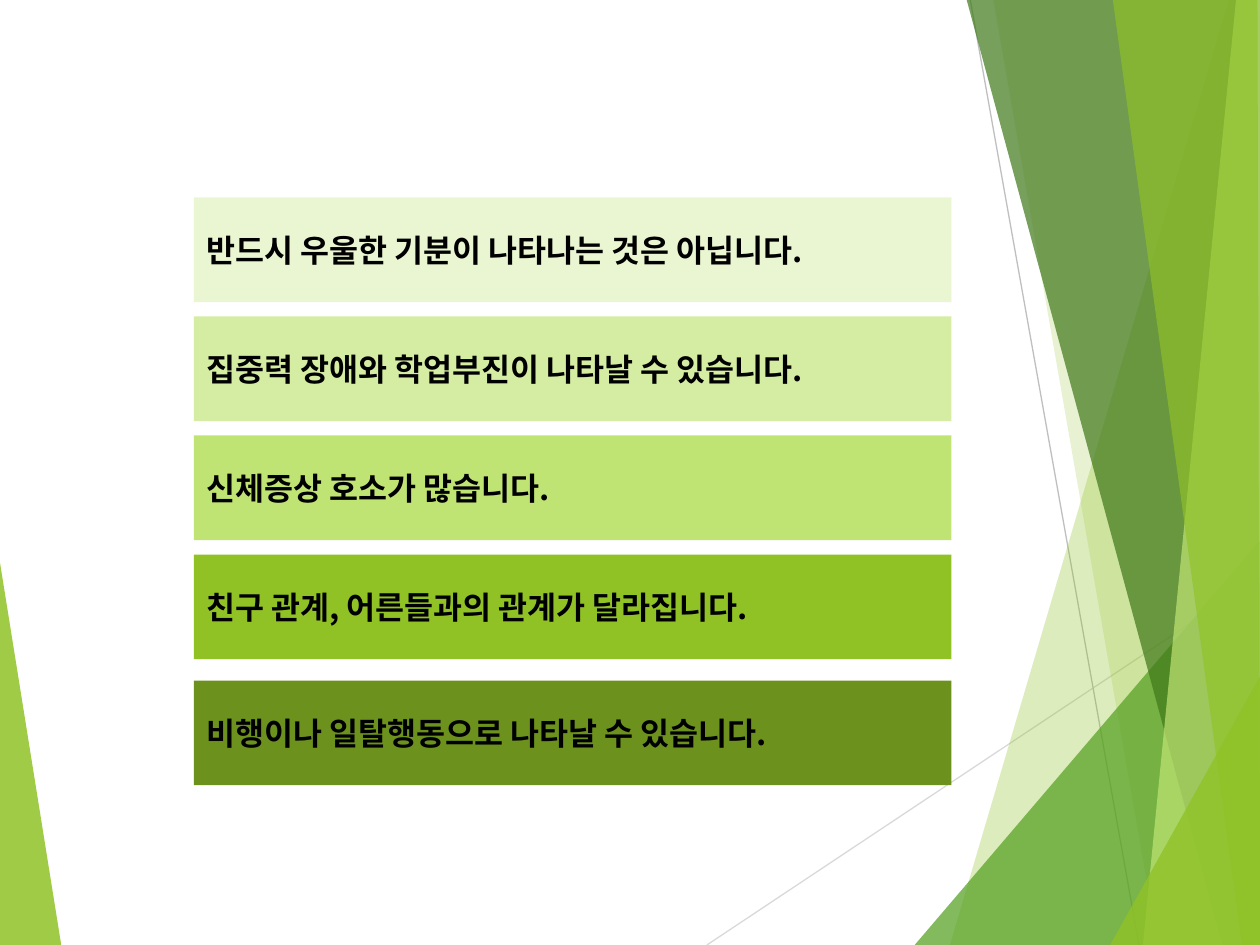
from typing import NamedTuple

from lxml import etree
from pptx import Presentation
from pptx import util as u
from pptx.dml.color import RGBColor
from pptx.enum import shapes, text
from pptx.oxml import ns

FONT = "Noto Sans CJK KR"
BLACK = RGBColor(0x00, 0x00, 0x00)
GREEN = RGBColor(0x90, 0xC2, 0x26)
LEAF = RGBColor(0x54, 0xA0, 0x21)
FOREST = RGBColor(0x3F, 0x78, 0x19)
LIME = RGBColor(0xC0, 0xE4, 0x74)
PALE = RGBColor(0xEA, 0xF6, 0xD1)
SOFT = RGBColor(0xD5, 0xED, 0xA2)
OLIVE = RGBColor(0x6C, 0x92, 0x1D)
LIGHT_GREY = RGBColor(0xD9, 0xD9, 0xD9)
GREY = RGBColor(0xBF, 0xBF, 0xBF)

# All lengths are in centimetres.
WIDTH, HEIGHT = 25.4, 19.05
EDGE, TOP = 25.43, -0.03  # shards bleed slightly past the page
BAR_LEFT, BAR_WIDTH, BAR_HEIGHT = 3.91, 15.27, 2.11
FIRST_TOP, BAR_PITCH, LAST_GAP = 3.98, 2.4, 0.14


class Shard(NamedTuple):
    color: RGBColor
    opacity: int
    points: list[tuple[float, float]]


class Ray(NamedTuple):
    color: RGBColor
    start: tuple[float, float]
    end: tuple[float, float]


class Bar(NamedTuple):
    color: RGBColor
    words: str


LEFT_SHARD = Shard(GREEN, 85, [(-0.03, 11.15), (1.24, 19.08), (-0.03, HEIGHT)])
RAYS = [
    Ray(LIGHT_GREY, (14.25, HEIGHT), (EDGE, 11.61)),
    Ray(GREY, (19.56, 0), (22.96, HEIGHT)),
]
RIGHT_SHARDS = [
    Shard(GREEN, 30, [(24.77, 0), (19.15, HEIGHT), (25.45, 19.08), (EDGE, 0)]),
    Shard(GREEN, 20, [(20.02, TOP), (23.34, HEIGHT), (EDGE, HEIGHT), (EDGE, TOP)]),
    Shard(LEAF, 72, [(18.44, HEIGHT), (WIDTH, 10.9), (EDGE, HEIGHT)]),
    Shard(FOREST, 70, [(19.48, TOP), (24.64, HEIGHT), (EDGE, HEIGHT), (EDGE, TOP)]),
    Shard(LIME, 70, [(24.92, TOP), (23.04, HEIGHT), (EDGE, HEIGHT), (WIDTH, TOP)]),
    Shard(GREEN, 65, [(22.43, TOP), (25.04, HEIGHT), (WIDTH, HEIGHT), (25.35, TOP)]),
    Shard(GREEN, 80, [(22.38, HEIGHT), (EDGE, 13.59), (EDGE, HEIGHT)]),
]
BARS = [
    Bar(PALE, "반드시 우울한 기분이 나타나는 것은 아닙니다."),
    Bar(SOFT, "집중력 장애와 학업부진이 나타날 수 있습니다."),
    Bar(LIME, "신체증상 호소가 많습니다."),
    Bar(GREEN, "친구 관계, 어른들과의 관계가 달라집니다."),
    Bar(OLIVE, "비행이나 일탈행동으로 나타날 수 있습니다."),
]


def paint(shape, color: RGBColor) -> None:
    """Give a shape a plain fill without outline or shadow."""
    shape.shadow.inherit = False
    shape.fill.solid()
    shape.fill.fore_color.rgb = color
    shape.line.fill.background()


def draw_shard(page, shard: Shard) -> None:
    start, *rest = [(u.Cm(x), u.Cm(y)) for x, y in shard.points]
    builder = page.shapes.build_freeform(*start)
    builder.add_line_segments(rest, close=True)
    shape = builder.convert_to_shape()
    paint(shape, shard.color)
    color = shape.fill._xPr.find(ns.qn("a:solidFill"))[0]
    etree.SubElement(color, ns.qn("a:alpha"), val=str(shard.opacity * 1000))


def draw_ray(page, ray: Ray) -> None:
    line = page.shapes.add_connector(
        shapes.MSO_CONNECTOR.STRAIGHT, *map(u.Cm, ray.start + ray.end)
    )
    line.line.color.rgb = ray.color
    line.line.width = u.Pt(0.75)
    etree.SubElement(line._element.spPr, ns.qn("a:effectLst"))


def draw_bar(page, bar: Bar, top: float) -> None:
    box = page.shapes.add_shape(
        shapes.MSO_SHAPE.RECTANGLE,
        *map(u.Cm, (BAR_LEFT, top, BAR_WIDTH, BAR_HEIGHT)),
    )
    paint(box, bar.color)
    frame = box.text_frame
    frame.word_wrap = True
    frame.vertical_anchor = text.MSO_ANCHOR.MIDDLE
    frame.text = bar.words
    para = frame.paragraphs[0]
    para.alignment = text.PP_ALIGN.LEFT
    span = para.runs[0]
    span.font.name = FONT
    span.font.size = u.Pt(18)
    span.font.bold = True
    span.font.color.rgb = BLACK
    etree.SubElement(span.font._element, ns.qn("a:ea"), typeface=FONT)


def main() -> None:
    deck = Presentation()
    deck.slide_width, deck.slide_height = u.Cm(WIDTH), u.Cm(HEIGHT)
    page = deck.slides.add_slide(deck.slide_layouts[6])

    draw_shard(page, LEFT_SHARD)
    for ray in RAYS:
        draw_ray(page, ray)
    for shard in RIGHT_SHARDS:
        draw_shard(page, shard)
    for row, bar in enumerate(BARS):
        extra = LAST_GAP if bar is BARS[-1] else 0
        draw_bar(page, bar, FIRST_TOP + row * BAR_PITCH + extra)

    deck.save("out.pptx")


if __name__ == "__main__":
    main()
